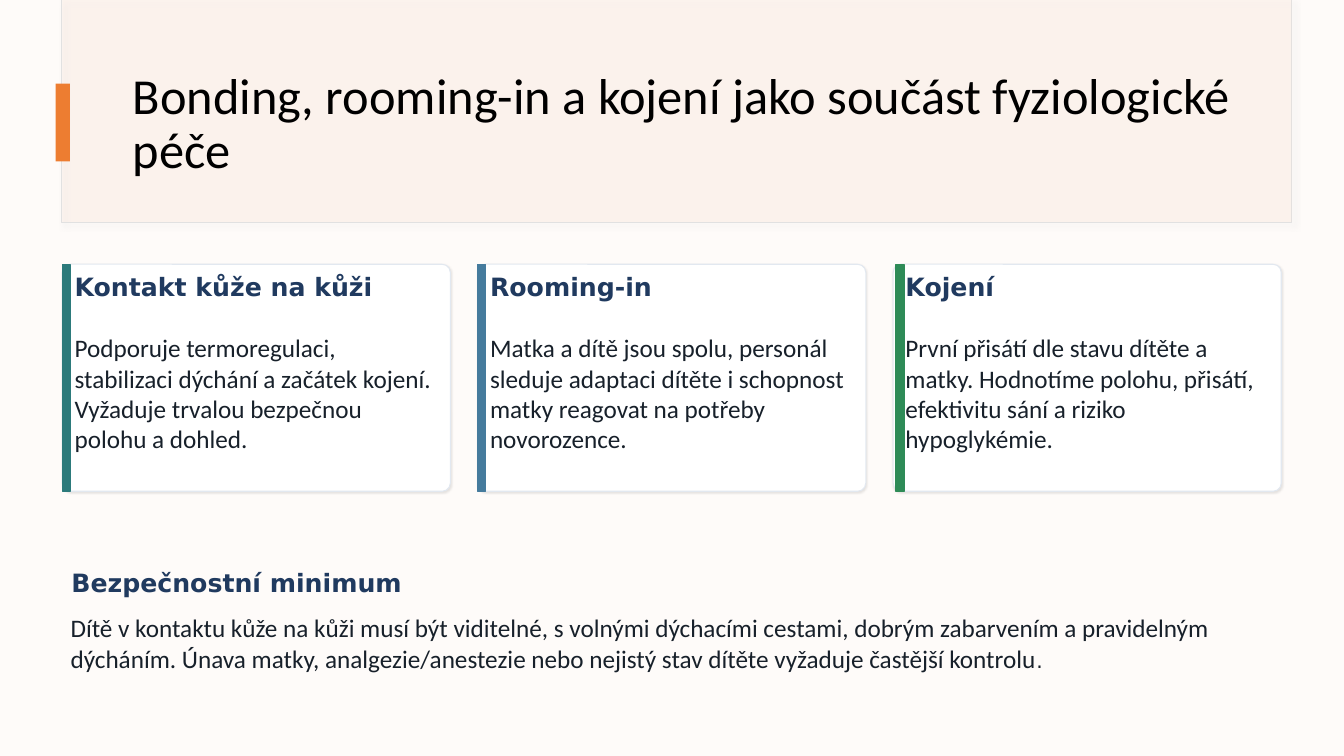
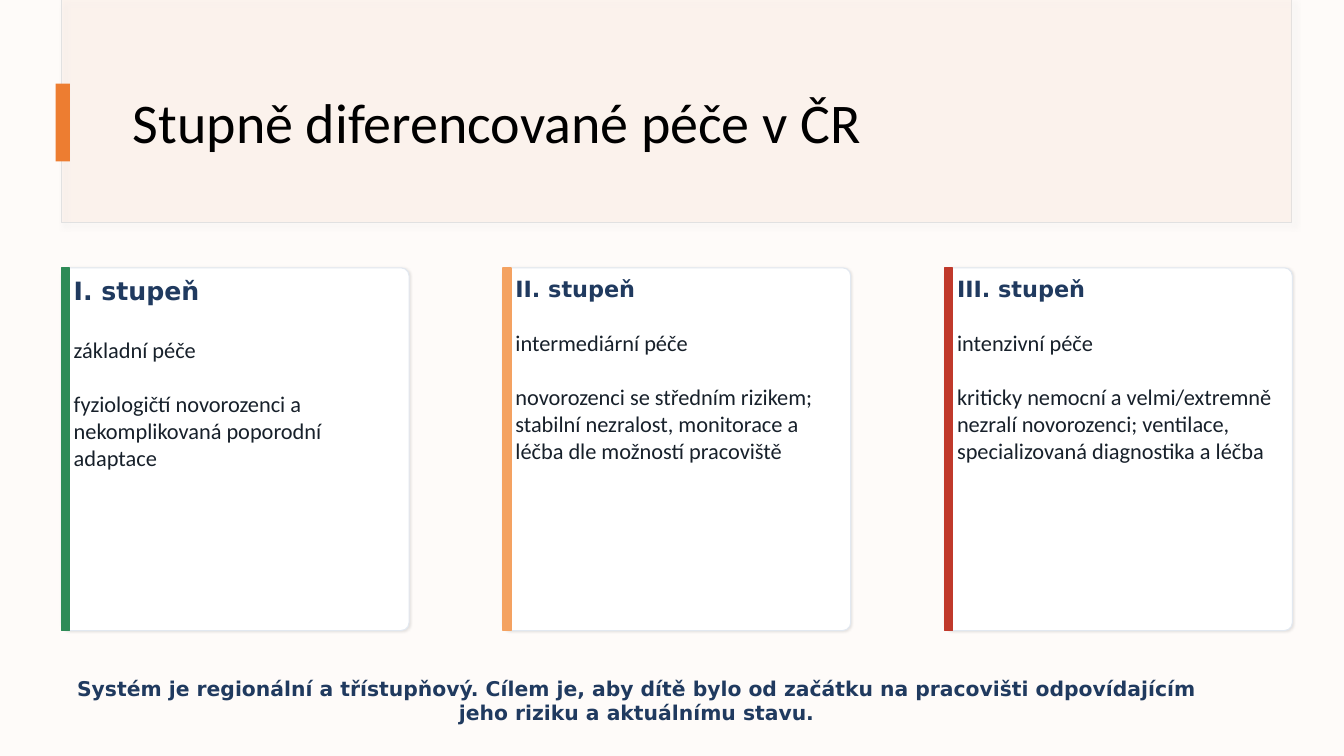
"""Build two slides on newborn care, with shared title band and accent cards."""
from lxml.etree import SubElement
from pptx import Presentation
from pptx.dml.color import RGBColor
from pptx.enum.shapes import MSO_SHAPE
from pptx.enum.text import MSO_ANCHOR, PP_ALIGN
from pptx.oxml.ns import qn
from pptx.util import Cm, Pt

COLORS = {
    "background": "FEFBF9", "band": "FBE5D6", "band_line": "E1E1E1",
    "band_shadow": "D9D9D9", "accent": "ED7D31", "title": "000000",
    "card": "FFFFFF", "card_line": "E2E8F0", "card_shadow": "000000",
    "heading": "203A5F", "body": "17202A", "teal": "2C7A7B", "blue": "457B9D",
    "green": "2E8B57", "orange": "F4A261", "red": "C0392B",
}
BODY_FONT = "Calibri"
HEADING_FONT = "DejaVu Sans"
HEADING = {"font": HEADING_FONT, "color": "heading", "bold": True}
LINE_HEIGHT = 1.22
BAND_SHADOW = ("band_shadow", 50, 4, 3)
CARD_SHADOW = ("card_shadow", 10, 1.5, 0.5)


def add_block(page, kind, place, fill, line=None, width=0.75, opacity=100, shadow=None):
    shape = page.shapes.add_shape(kind, *[Cm(length) for length in place])
    shape.shadow.inherit = False
    shape.fill.solid()
    shape.fill.fore_color.rgb = RGBColor.from_string(COLORS[fill])
    properties = shape._element.spPr
    if opacity < 100:
        tint = properties.find(qn("a:solidFill")).find(qn("a:srgbClr"))
        SubElement(tint, qn("a:alpha"), val=str(opacity * 1000))
    if line:
        shape.line.color.rgb = RGBColor.from_string(COLORS[line])
        shape.line.width = Pt(width)
    else:
        shape.line.fill.background()
    if shadow:
        color, strength, blur, distance = shadow
        outer = SubElement(properties.find(qn("a:effectLst")), qn("a:outerShdw"),
                           blurRad=str(Pt(blur)), dist=str(Pt(distance)),
                           dir="2700000", algn="tl", rotWithShape="0")
        tint = SubElement(outer, qn("a:srgbClr"), val=COLORS[color])
        SubElement(tint, qn("a:alpha"), val=str(strength * 1000))
    return shape


def write(box, text, size=18, font=BODY_FONT, color="body", bold=False,
          align=PP_ALIGN.LEFT, before=0, spacing=1.0, anchor=MSO_ANCHOR.TOP,
          inset=None, same_line=False):
    frame = box.text_frame
    frame.word_wrap = True
    frame.vertical_anchor = anchor
    if inset is not None:
        frame.margin_left = frame.margin_right = Cm(inset)
        frame.margin_top = frame.margin_bottom = Cm(inset)
    para = frame.paragraphs[-1]
    if para.runs and not same_line:
        para = frame.add_paragraph()
    if not same_line:
        para.alignment = align
        para.space_before = Pt(before)
        para.line_spacing = spacing
    span = para.add_run()
    span.text = text
    span.font.name = font
    span.font.size = Pt(size)
    span.font.bold = bold
    span.font.color.rgb = RGBColor.from_string(COLORS[color])


deck = Presentation()
deck.slide_width = Cm(33.87)
deck.slide_height = Cm(19.05)
backdrop = deck.slide_master.background.fill
backdrop.solid()
backdrop.fore_color.rgb = RGBColor.from_string(COLORS["background"])

slides = [
    {
        "title": "Bonding, rooming-in a kojení jako součást fyziologické péče",
        "title_size": 36,
        "left": 1.57, "top": 6.66, "width": 9.78, "height": 5.72, "pitch": 10.47,
        "corner": 0.036, "body_size": 18,
        "cards": [
            ("teal", 0, 18, "Kontakt kůže na kůži",
             ["Podporuje termoregulaci, stabilizaci dýchání a začátek kojení. "
              "Vyžaduje trvalou bezpečnou polohu a dohled."]),
            ("blue", 0, 18, "Rooming-in",
             ["Matka a dítě jsou spolu, personál sleduje adaptaci dítěte i schopnost "
              "matky reagovat na potřeby novorozence."]),
            ("green", 0.07, 18, "Kojení",
             ["První přisátí dle stavu dítěte a matky. Hodnotíme polohu, přisátí, "
              "efektivitu sání a riziko hypoglykémie."]),
        ],
        "notes": [
            ((1.55, 14.17, 16.94, 1.02), [("Bezpečnostní minimum", HEADING)]),
            ((1.78, 15.44, 31.27, 2.9), [
                ("Dítě v kontaktu kůže na kůži musí být viditelné, s volnými dýchacími "
                 "cestami, dobrým zabarvením a pravidelným dýcháním. Únava matky, "
                 "analgezie/anestezie nebo nejistý stav dítěte vyžaduje častější kontrolu",
                 {"inset": 0}),
                (".", {"size": 14.5, "font": HEADING_FONT, "same_line": True}),
            ]),
        ],
    },
    {
        "title": "Stupně diferencované péče v ČR",
        "title_size": 40,
        "left": 1.55, "top": 6.75, "width": 8.76, "height": 9.14, "pitch": 11.13,
        "corner": 0.023, "body_size": 16,
        "cards": [
            ("green", 0, 18, "I. stupeň",
             ["základní péče",
              "fyziologičtí novorozenci a nekomplikovaná poporodní adaptace"]),
            ("orange", 0, 16, "II. stupeň",
             ["intermediární péče",
              "novorozenci se středním rizikem; stabilní nezralost, monitorace a léčba "
              "dle možností pracoviště"]),
            ("red", 0, 16, "III. stupeň",
             ["intenzivní péče",
              "kriticky nemocní a velmi/extremně nezralí novorozenci; ventilace, "
              "specializovaná diagnostika a léčba"]),
        ],
        "notes": [
            ((1.75, 17.04, 28.58, 1.47), [
                ("Systém je regionální a třístupňový. Cílem je, aby dítě bylo od začátku "
                 "na pracovišti odpovídajícím jeho riziku a aktuálnímu stavu.",
                 {**HEADING, "size": 14.5, "align": PP_ALIGN.CENTER, "inset": 0}),
            ]),
        ],
    },
]

for content in slides:
    page = deck.slides.add_slide(deck.slide_layouts[6])
    add_block(page, MSO_SHAPE.RECTANGLE, (1.55, 0, 31.01, 5.61), "band",
              line="band_line", opacity=15, shadow=BAND_SHADOW)
    add_block(page, MSO_SHAPE.RECTANGLE, (1.57, 0, 30.99, 5.59), "band", opacity=15)
    title = page.shapes.add_textbox(Cm(3.1), Cm(1.52), Cm(28.24), Cm(3.28))
    write(title, content["title"], size=content["title_size"], color="title",
          spacing=0.9, anchor=MSO_ANCHOR.MIDDLE)
    add_block(page, MSO_SHAPE.RECTANGLE, (1.4, 2.11, 0.36, 1.96), "accent")

    top, height = content["top"], content["height"]
    for index, (color, shift, heading_size, heading, bodies) in enumerate(content["cards"]):
        left = content["left"] + index * content["pitch"]
        card = add_block(page, MSO_SHAPE.ROUNDED_RECTANGLE,
                         (left, top, content["width"], height), "card",
                         line="card_line", shadow=CARD_SHADOW)
        card.adjustments[0] = content["corner"]
        write(card, heading, size=heading_size, **HEADING)
        gap_size = heading_size
        for body in bodies:
            write(card, body, size=content["body_size"], before=gap_size * LINE_HEIGHT)
            gap_size = content["body_size"]
        add_block(page, MSO_SHAPE.RECTANGLE, (left + shift, top, 0.2, height), color,
                  line=color, width=1)

    for place, spans in content["notes"]:
        note = page.shapes.add_textbox(*[Cm(length) for length in place])
        for text, style in spans:
            write(note, text, **style)

deck.save("out.pptx")
